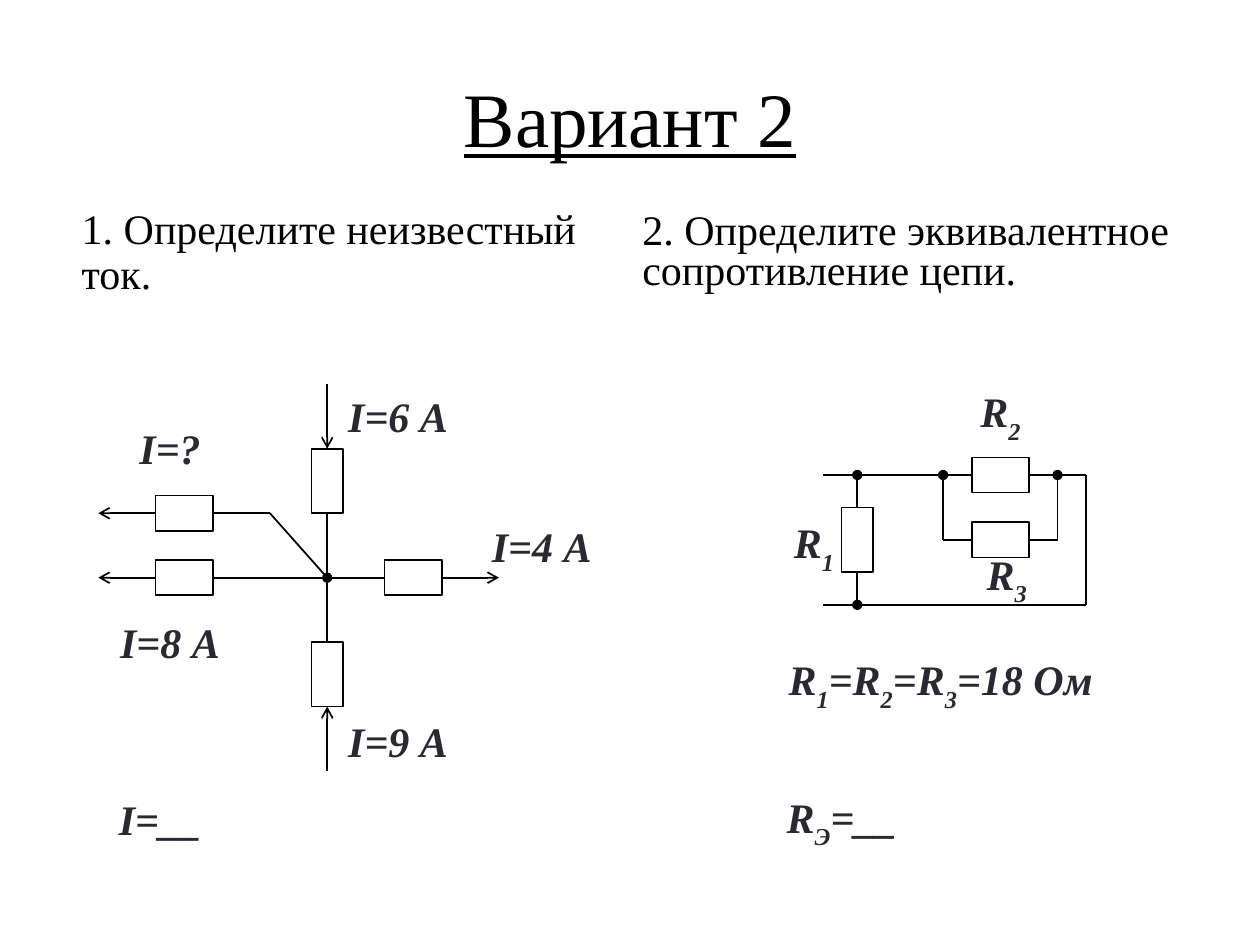
from pptx import Presentation
from pptx.dml.color import RGBColor
from pptx.enum.shapes import MSO_CONNECTOR, MSO_SHAPE
from pptx.enum.text import MSO_ANCHOR, PP_ALIGN
from pptx.oxml.ns import qn
from pptx.util import Inches, Pt
from lxml.etree import SubElement

TOP, LEFT, BOTTOM, RIGHT = range(4)
FACE = "Times New Roman"
BLACK, WHITE, INK = "000000", "FFFFFF", "292934"


def color(code):
    return RGBColor.from_string(code)


def text(slide, words, box, size=24, tint=BLACK, align=PP_ALIGN.LEFT,
         anchor=MSO_ANCHOR.TOP, space=None):
    frame = slide.shapes.add_textbox(*map(Inches, box)).text_frame
    frame.word_wrap = True
    frame.vertical_anchor = anchor
    para = frame.paragraphs[0]
    para.alignment = align
    para.line_spacing = space
    font = para.font
    font.name, font.size = FACE, Pt(size)
    font.color.rgb = color(tint)
    for i, part in enumerate(words.split("|")):
        run = para.add_run()
        run.text = part
        if i % 2:
            run._r.get_or_add_rPr().set("baseline", "-30000")
    return font


def label(slide, words, x, y, w=1.14, h=0.49):
    font = text(slide, words, (x, y, w, h), tint=INK, align=PP_ALIGN.CENTER)
    font.bold = font.italic = True


def load(slide, x, y, w, h):
    box = (x - w / 2, y - h / 2, w, h)
    shape = slide.shapes.add_shape(MSO_SHAPE.RECTANGLE, *map(Inches, box))
    shape.shadow.inherit = False
    shape.fill.solid()
    shape.fill.fore_color.rgb = color(WHITE)
    shape.line.color.rgb = color(BLACK)
    shape.line.width = Pt(1)
    return shape


def wire(slide, start, end, head=None, tail=None):
    spots = [(0, 0) if hasattr(p[0], "shape_id") else p for p in (start, end)]
    link = slide.shapes.add_connector(
        MSO_CONNECTOR.STRAIGHT, *[Inches(v) for p in spots for v in p])
    for p, join in ((start, link.begin_connect), (end, link.end_connect)):
        if hasattr(p[0], "shape_id"):
            join(*p)
    link.line.color.rgb = color(BLACK)
    link.line.width = Pt(1)
    line = link.line._get_or_add_ln()
    for tag, kind in (("a:headEnd", head), ("a:tailEnd", tail)):
        if kind:
            SubElement(line, qn(tag)).set("type", kind)
    SubElement(link._element.spPr, qn("a:effectLst"))


def heads(slide, x, y, w, h):
    title = text(slide, "Вариант 2", (x, y, w, h), 44, align=PP_ALIGN.CENTER,
                 anchor=MSO_ANCHOR.MIDDLE)
    title.underline = True
    text(slide, "1. Определите неизвестный ток.",
         (x + 0.05, y + 1.18, 4.42, 0.94), anchor=MSO_ANCHOR.BOTTOM, space=0.9)
    text(slide, "2. Определите эквивалентное сопротивление цепи.",
         (x + 4.5, y + 1.38, 4.5, 0.7), anchor=MSO_ANCHOR.BOTTOM, space=0.8)


def node(slide, x, y, w, h):
    dx, dy = w / 7, h / 6

    def at(col, row):
        return x + col * dx, y + row * dy

    hub, bend = at(4, 3), at(3, 2)
    for row, edge, near, far in ((1.5, 0, TOP, BOTTOM), (4.5, 6, BOTTOM, TOP)):
        part = load(slide, *at(4, row), 0.25, dy)
        wire(slide, at(4, edge), (part, near), tail="arrow")
        wire(slide, (part, far), hub)
    for col, row, edge, near, far, goal in (
            (1.5, 2, 0, LEFT, RIGHT, bend),
            (1.5, 3, 0, LEFT, RIGHT, hub),
            (5.5, 3, 7, RIGHT, LEFT, hub)):
        part = load(slide, *at(col, row), dx, 0.28)
        wire(slide, (part, near), at(edge, row), tail="arrow")
        wire(slide, (part, far), goal, tail="oval" if col > 4 else None)
    wire(slide, bend, hub)
    for words, left, top in (
            ("I=?", 0, 0.25), ("I=6 А", 1.81, 0), ("I=9 А", 1.81, 2.58),
            ("I=8 А", 0, 1.79), ("I=4 А", 2.95, 1.03), ("I=__", -0.08, 3.2)):
        label(slide, words, x + left, y + top)


def net(slide, x, y, w, h):
    dx, dy = w / 5, h / 2

    def at(col, row):
        return x + col * dx, y + row * dy

    first = load(slide, *at(1, 1), 0.25, dy)
    second, third = [load(slide, *at(3.5, row), dx, 0.28) for row in (0, 1)]
    wire(slide, at(1, 0), (first, TOP), head="oval")
    wire(slide, (first, BOTTOM), at(1, 2), tail="oval")
    wire(slide, at(0.4, 0), (second, LEFT))
    wire(slide, (second, RIGHT), at(5, 0))
    wire(slide, at(5, 0), at(5, 2))
    wire(slide, at(0.4, 2), at(5, 2))
    for col, side in ((2.5, LEFT), (4.5, RIGHT)):
        wire(slide, at(col, 0), at(col, 1), head="oval")
        wire(slide, at(col, 1), (third, side))
    for words, left, top, wide in (
            ("R|1", -0.46, 0.28, 1.14), ("R|2", 1.02, -0.76, 1.14),
            ("R|3", 1.07, 0.53, 1.14),
            ("R|1|=R|2|=R|3|=18 Ом", -0.24, 1.37, 2.71),
            ("R|Э|=__", -0.24, 2.46, 1.14)):
        label(slide, words, x + left, y + top, wide)


def main():
    deck = Presentation()
    deck.slide_width, deck.slide_height = Inches(10), Inches(7.5)
    slide = deck.slides.add_slide(deck.slide_layouts[6])
    heads(slide, 0.5, 0.3, 9, 1.25)
    node(slide, 0.78, 3.05, 3.18, 3.07)
    net(slide, 6.35, 3.77, 2.27, 1.03)
    deck.save("out.pptx")


if __name__ == "__main__":
    main()
